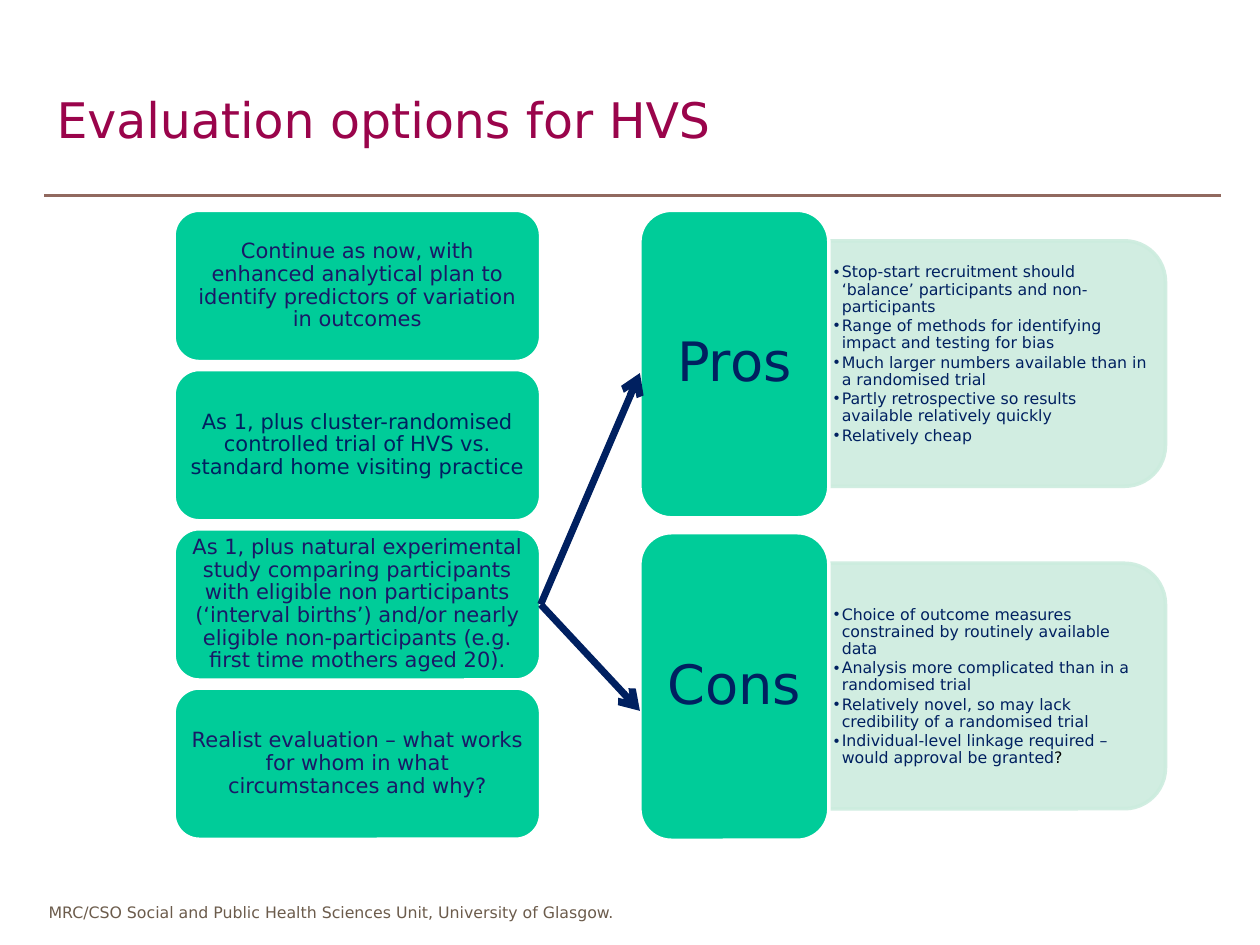
"""Build the slide on evaluation options for HVS."""
from pptx import Presentation
from pptx import util as u
from pptx.dml.color import RGBColor
from pptx.enum import shapes, text
from pptx.oxml.ns import qn
from lxml import etree

FONT = "DejaVu Sans"
NAVY, INDIGO, GREEN, MINT = "002060", "191966", "00CC99", "CCECDE"
OPTIONS = [
    ("Continue as now, with enhanced analytical plan to identify "
     "predictors of variation in outcomes", INDIGO),
    ("As 1, plus cluster-randomised controlled trial of HVS vs. "
     "standard home visiting practice", NAVY),
    ("As 1, plus natural experimental study comparing participants with "
     "eligible non participants (‘interval births’) and/or nearly eligible "
     "non-participants (e.g. first time mothers aged 20).", INDIGO),
    ("Realist evaluation – what works for whom in what circumstances "
     "and why?", INDIGO),
]
PROS = [
    "Stop-start recruitment should ‘balance’ participants and non-participants",
    "Range of methods for identifying impact and testing for bias",
    "Much larger numbers available than in a randomised trial",
    "Partly retrospective so results available relatively quickly",
    "Relatively cheap",
]
CONS = [
    "Choice of outcome measures constrained by routinely available data",
    "Analysis more complicated than in a randomised trial",
    "Relatively novel, so may lack credibility of a randomised trial",
    "Individual-level linkage required – would approval be granted",
]


def tint(value):
    """Return the colour for a hex string."""
    return RGBColor.from_string(value)


def cm(*sizes):
    """Return lengths for numbers in centimetres."""
    return [u.Cm(size) for size in sizes]


def place(shape, *area):
    """Set left, top, width and height in centimetres."""
    shape.left, shape.top, shape.width, shape.height = cm(*area)


def add_run(para, words, size, color):
    """Add one formatted run to a paragraph."""
    run = para.add_run()
    run.text = words
    run.font.name, run.font.size = FONT, u.Pt(size)
    run.font.color.rgb = tint(color)


def write(shape, lines, size=12, color=NAVY, align=text.PP_ALIGN.CENTER,
          pad=(0.25, 0.13, 0.25, 0.13), space=1, after=0, wrap=True):
    """Fill a shape with formatted paragraphs and return them."""
    frame = shape.text_frame
    frame.auto_size = text.MSO_AUTO_SIZE.NONE
    frame.word_wrap = wrap
    frame.vertical_anchor = text.MSO_ANCHOR.MIDDLE
    (frame.margin_left, frame.margin_top,
     frame.margin_right, frame.margin_bottom) = cm(*pad)
    for i, line in enumerate(lines):
        para = frame.add_paragraph() if i else frame.paragraphs[0]
        para.alignment, para.line_spacing = align, space
        para.space_before, para.space_after = u.Pt(0), u.Pt(after * size)
        add_run(para, line, size, color)
    return frame.paragraphs


def add_box(slide, kind, area, fill, edge):
    """Add a flat filled preset shape."""
    box = slide.shapes.add_shape(kind, *cm(*area))
    box.shadow.inherit = False
    box.fill.solid()
    box.fill.fore_color.rgb = tint(fill)
    box.line.color.rgb = tint(edge)
    box.line.width = u.Pt(2)
    return box


def add_card(slide, area, words, **style):
    """Add a green rounded box with centred text."""
    card = add_box(slide, shapes.MSO_SHAPE.ROUNDED_RECTANGLE, area,
                   GREEN, "FFFFFF")
    write(card, [words], space=0.9, after=0.35, **style)
    return card


def add_panel(slide, top):
    """Add a translucent panel behind everything, rounded on its right."""
    panel = add_box(slide, shapes.MSO_SHAPE.ROUND_2_SAME_RECTANGLE,
                    (17.63, top, 4.95, 6.78), MINT, MINT)
    panel.rotation = 90
    for color in panel.element.spPr.iter(qn("a:srgbClr")):
        etree.SubElement(color, qn("a:alpha"), val="90000")
    slide.shapes._spTree.insert(2, panel.element)


def add_list(body, top, lines, foot):
    """Fill a body placeholder with small bulleted lines."""
    place(body, 16.71, top, 6.53, 4.47)
    paras = write(body, lines, size=9, align=text.PP_ALIGN.LEFT,
                  pad=(0.1, 0.05, 0.1, foot), space=0.9, after=0.15)
    for para in paras:
        props = para._p.get_or_add_pPr()
        props.set("marL", str(u.Cm(0.16)))
        props.set("indent", str(u.Cm(-0.16)))
        etree.SubElement(props, qn("a:buChar"), char="•")
    return paras


def add_line(slide, ends, color, width, source=None):
    """Add a line, or an arrow if it starts from a source box."""
    line = slide.shapes.add_connector(shapes.MSO_CONNECTOR.STRAIGHT, *cm(*ends))
    line.line.color.rgb, line.line.width = tint(color), u.Pt(width)
    if source is not None:
        line.begin_connect(source, 3)
        etree.SubElement(line.line._get_or_add_ln(), qn("a:tailEnd"), type="arrow")
    etree.SubElement(line.element.spPr, qn("a:effectLst"))


def main():
    """Build and save the slide."""
    deck = Presentation()
    deck.slide_width, deck.slide_height = cm(25.4, 19.05)
    slide = deck.slides.add_slide(deck.slide_layouts[3])
    title, *bodies = list(slide.placeholders)[:3]
    place(title, 0.89, 1.27, 23.7, 2.26)
    write(title, ["Evaluation options for HVS"], size=28, color="9A044B",
          align=text.PP_ALIGN.LEFT)
    add_line(slide, (0.89, 3.94, 24.61, 3.94), "91695F", 1.75)
    foot = slide.shapes.add_textbox(*cm(0.64, 18.06, 12.06, 0.64))
    write(foot, ["MRC/CSO Social and Public Health Sciences Unit, "
                 "University of Glasgow."], size=9, color="6C5C4C", wrap=False)

    cards = [add_card(slide, (3.51, 4.24 + 3.21 * i, 7.39, 3.05), words,
                      color=color, pad=(0.12, 0.08, 0.12, 0.08))
             for i, (words, color) in enumerate(OPTIONS)]

    sides = [("Pros", PROS, 0.45, 7.52), ("Cons", CONS, 0.05, 14.33)]
    for i, (name, lines, pad, tip) in enumerate(sides):
        shift = 6.5 * i
        add_panel(slide, 3.94 + shift)
        paras = add_list(bodies[i], 5.11 + shift, lines, pad)
        add_card(slide, (12.9, 4.24 + shift, 3.81, 6.2), name, size=31,
                 pad=(0.32, 0.16, 0.32, 0.16))
        add_line(slide, (10.9, 12.12, 12.9, tip), NAVY, 4, source=cards[2])
    add_run(paras[-1], "?", 9, "000000")
    deck.save("out.pptx")


if __name__ == "__main__":
    main()
